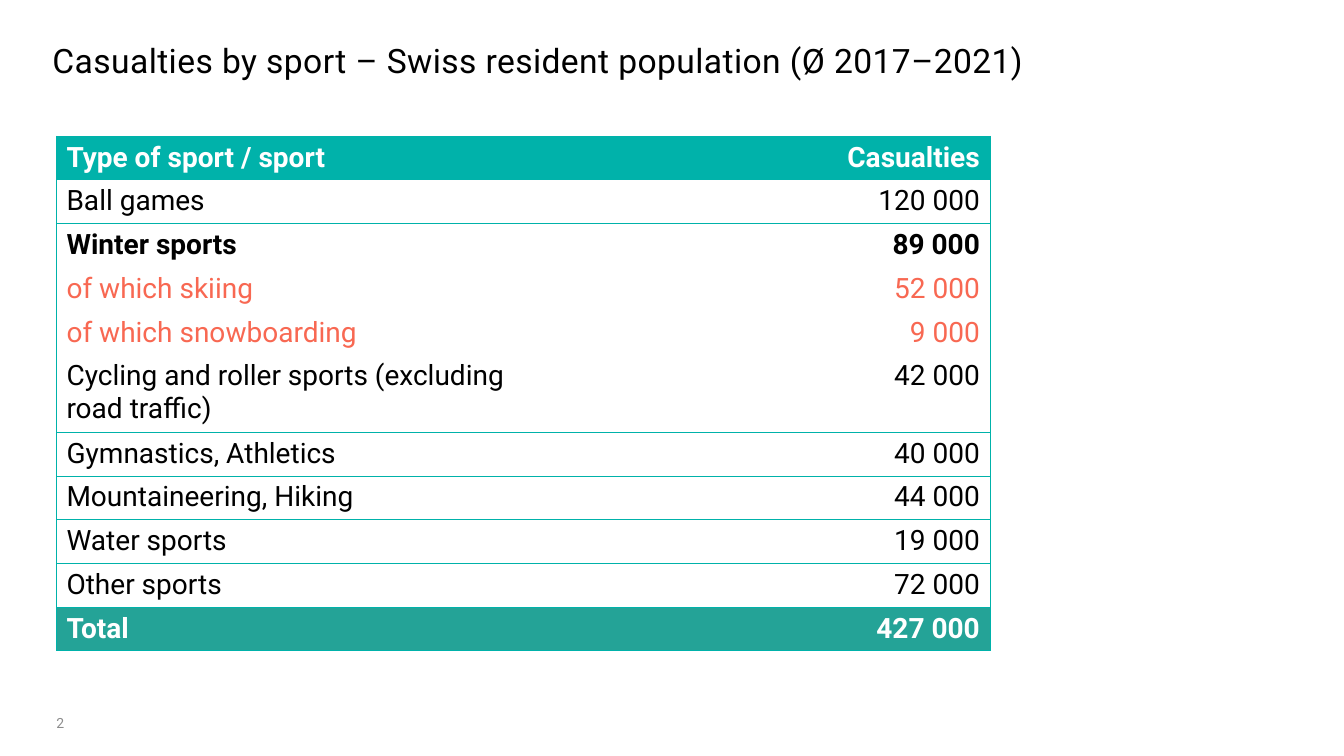
from lxml import etree
from pptx import Presentation
from pptx.dml.color import RGBColor
from pptx.enum.text import PP_ALIGN
from pptx.oxml.ns import qn
from pptx.util import Inches, Pt

LEFT, RIGHT = PP_ALIGN.LEFT, PP_ALIGN.RIGHT
BLACK = RGBColor(0x00, 0x00, 0x00)
WHITE = RGBColor(0xFF, 0xFF, 0xFF)
GREY = RGBColor(0x8C, 0x8C, 0x8C)
TEAL = RGBColor(0x00, 0xB2, 0xAA)
GREEN = RGBColor(0x24, 0xA3, 0x97)
CORAL = RGBColor(0xF8, 0x68, 0x52)

TITLE = "Casualties by sport – Swiss resident population (Ø 2017–2021)"
PAGE_NUMBER = "2"

# Row kinds: text colour, bold, fill
STYLES = {
    "head": (WHITE, True, TEAL),
    "plain": (BLACK, False, None),
    "group": (BLACK, True, None),
    "part": (CORAL, False, None),
    "total": (WHITE, True, GREEN),
}
ROWS = [
    ("Type of sport / sport", "Casualties", "head"),
    ("Ball games", "120 000", "plain"),
    ("Winter sports", "89 000", "group"),
    ("of which skiing", "52 000", "part"),
    ("of which snowboarding", "9 000", "part"),
    ("Cycling and roller sports (excluding road traffic)", "42 000", "plain"),
    ("Gymnastics, Athletics", "40 000", "plain"),
    ("Mountaineering, Hiking", "44 000", "plain"),
    ("Water sports", "19 000", "plain"),
    ("Other sports", "72 000", "plain"),
    ("Total", "427 000", "total"),
]
COLUMN_WIDTHS = (4.62, 4.64)
ALIGNMENTS = (LEFT, RIGHT)
ROW_HEIGHT, TALL_ROW_HEIGHT, TALL_ROW = 0.43, 0.75, 5
UNDIVIDED = ("group", "part")  # rows with no line below


def write(frame, text, size, color, bold=False, align=LEFT):
    para = frame.paragraphs[0]
    para.alignment = align
    span = para.add_run()
    span.text = text
    for name, value in {"name": "Roboto", "size": Pt(size), "bold": bold}.items():
        setattr(span.font, name, value)
    span.font.color.rgb = color
    return span


def add_text(page, place, text, size, color):
    frame = page.shapes.add_textbox(*map(Inches, place)).text_frame
    frame.word_wrap = True
    for side in ("left", "right", "top", "bottom"):
        setattr(frame, f"margin_{side}", 0)
    return write(frame, text, size, color)


def set_borders(cell, sides):
    """Draw teal lines on the named sides (of L, R, T, B) and clear the rest."""
    properties = cell._tc.get_or_add_tcPr()
    for place, side in enumerate("LRTB"):
        line = etree.Element(qn(f"a:ln{side}"), w=str(Pt(0.5)))
        if side in sides:
            fill = etree.SubElement(line, qn("a:solidFill"))
            etree.SubElement(fill, qn("a:srgbClr"), val=str(TEAL))
        else:
            etree.SubElement(line, qn("a:noFill"))
        properties.insert(place, line)


def add_casualty_table(page):
    heights = [TALL_ROW_HEIGHT if row == TALL_ROW else ROW_HEIGHT
               for row in range(len(ROWS))]
    table = page.shapes.add_table(
        len(ROWS), len(COLUMN_WIDTHS), Inches(0.56), Inches(1.35),
        Inches(sum(COLUMN_WIDTHS)), Inches(sum(heights))).table
    table.first_row = table.horz_banding = False
    for column, width in zip(table.columns, COLUMN_WIDTHS):
        column.width = Inches(width)
    for index, (*texts, kind) in enumerate(ROWS):
        table.rows[index].height = Inches(heights[index])
        color, bold, fill = STYLES[kind]
        above = "" if index and ROWS[index - 1][2] in UNDIVIDED else "T"
        below = "" if kind in UNDIVIDED else "B"
        for column, text in enumerate(texts):
            cell = table.cell(index, column)
            write(cell.text_frame, text, 20, color, bold, ALIGNMENTS[column])
            if fill is None:
                cell.fill.background()
            else:
                cell.fill.solid()
                cell.fill.fore_color.rgb = fill
            set_borders(cell, "LR"[column] + above + below)


def main():
    deck = Presentation()
    deck.slide_width, deck.slide_height = Inches(13.33), Inches(7.5)
    page = deck.slides.add_slide(deck.slide_layouts[6])
    title = add_text(page, (0.52, 0.4, 12.28, 0.35), TITLE, 24, BLACK)
    title.font._element.set("spc", "30")
    add_casualty_table(page)
    add_text(page, (0.56, 7.09, 0.89, 0.18), PAGE_NUMBER, 10, GREY)
    deck.save("out.pptx")


if __name__ == "__main__":
    main()
